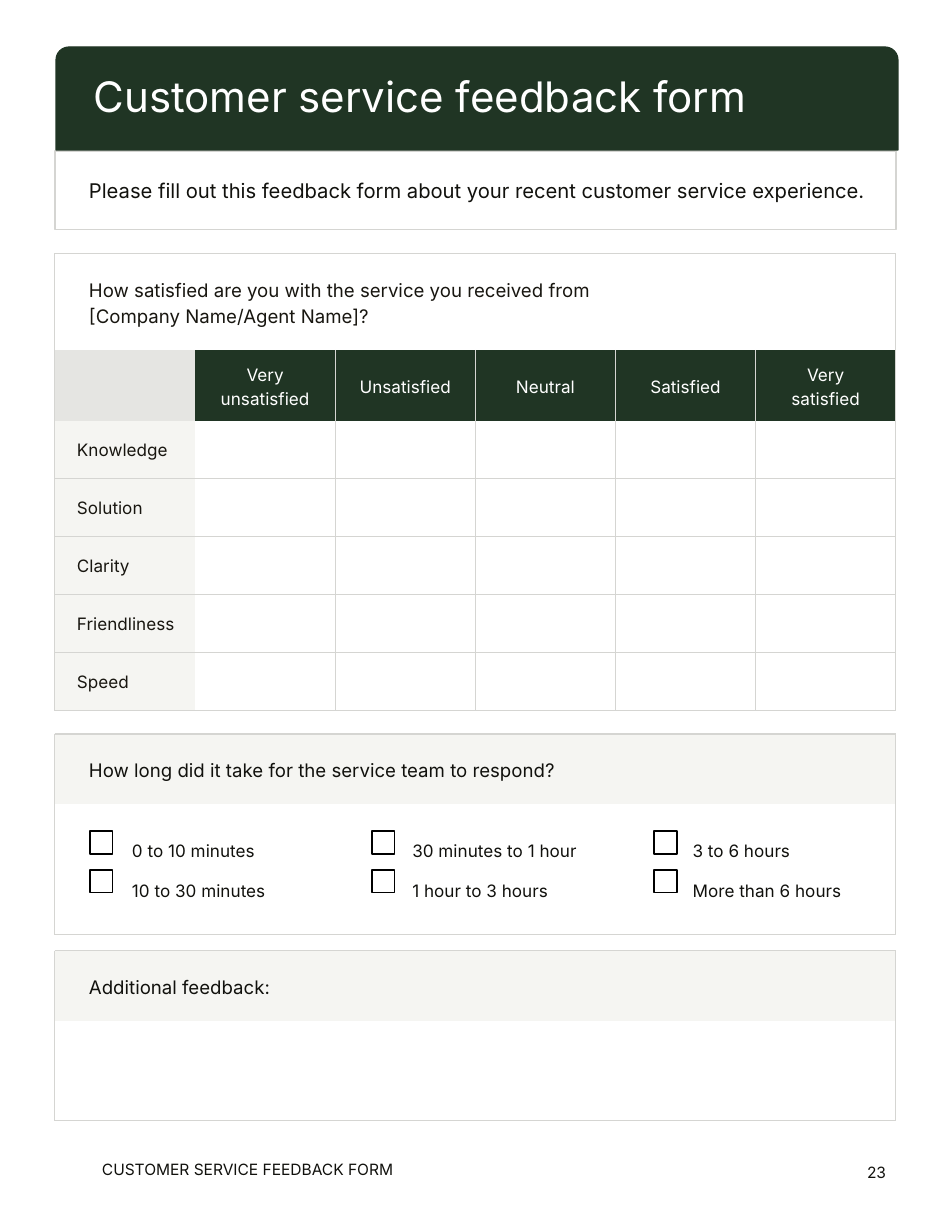
from lxml import etree
from pptx import Presentation
from pptx import util as u
from pptx.dml.color import RGBColor
from pptx.enum import shapes, text
from pptx.oxml.ns import qn

SCALE = 914400 / 112  # EMU in one px
LEFT, WIDTH = 55, 841
GREEN, INK, DARK, WHITE = "203524", "11110D", "181610", "FFFFFF"
PALE, GREY, RULE = "F5F5F2", "E5E5E2", "D5D5D2"
MIDDLE = text.MSO_ANCHOR.MIDDLE


def px(length):
    return u.Emu(round(length * SCALE))


def color(value):
    return RGBColor.from_string(value)


def write(frame, content, size=11, ink=INK, align=None, spacing=None, before=0, indent=0):
    """Write a list of paragraphs; a newline inside one is a line break."""
    for number, line in enumerate(content):
        para = frame.paragraphs[0] if number == 0 else frame.add_paragraph()
        if indent:
            para._p.get_or_add_pPr().set("marL", str(px(indent)))
            para._p.get_or_add_pPr().set("indent", "0")
        if align is not None:
            para.alignment = align
        if spacing:
            para.line_spacing = spacing
        if before and number:
            para.space_before = u.Pt(before)
        for part, words in enumerate(line.split("\n")):
            if part:
                para.add_line_break()
            span = para.add_run()
            span.text = words
            span.font.size = u.Pt(size)
            span.font.name = "Inter"
            span.font.color.rgb = color(ink)


def set_margins(target, insets):
    for side, inset in zip(("left", "top", "right", "bottom"), insets):
        setattr(target, f"margin_{side}", px(inset))


class Form:
    def __init__(self, page):
        self.page = page

    def label(self, left, top, width, height, content, anchor=None, **style):
        box = self.page.shapes.add_textbox(*map(px, (left, top, width, height)))
        frame = box.text_frame
        frame.word_wrap = True
        set_margins(frame, (11, 11, 11, 11))
        if anchor is not None:
            frame.vertical_anchor = anchor
        write(frame, [content], **style)

    def panel(self, left, top, width, height, kind=shapes.MSO_SHAPE.RECTANGLE,
              fill=None, line=RULE, content=None, insets=(34, 22, 0, 22), **style):
        box = self.page.shapes.add_shape(kind, *map(px, (left, top, width, height)))
        box.shadow.inherit = False
        if fill:
            box.fill.solid()
            box.fill.fore_color.rgb = color(fill)
        else:
            box.fill.background()
        box.line.color.rgb = color(line)
        box.line.width = u.Pt(0.75)
        if content:
            frame = box.text_frame
            frame.word_wrap = True
            frame.vertical_anchor = MIDDLE
            set_margins(frame, insets)
            write(frame, [content], align=text.PP_ALIGN.LEFT, **style)
        return box

    def table(self, top, heights, columns):
        frame = self.page.shapes.add_table(
            len(heights), columns, px(LEFT), px(top), px(WIDTH), px(sum(heights)))
        table = frame.table
        table.first_row = table.horz_banding = False
        for row, height in zip(table.rows, heights):
            row.height = px(height)
        for column in table.columns:
            column.width = px(WIDTH / columns)
        return table

    def cell(self, cell, sides="", fill=WHITE, content=None, insets=(34, 22, 22, 22),
             anchor=MIDDLE, **style):
        properties = cell._tc.get_or_add_tcPr()
        for side in "LRTB":
            line = etree.SubElement(properties, qn(f"a:ln{side}"), w=str(u.Pt(0.75)))
            if side in sides:
                solid = etree.SubElement(line, qn("a:solidFill"))
                etree.SubElement(solid, qn("a:srgbClr"), val=RULE)
            else:
                etree.SubElement(line, qn("a:noFill"))
        cell.fill.solid()
        cell.fill.fore_color.rgb = color(fill)
        if content:
            set_margins(cell, insets)
            cell.vertical_anchor = anchor
            write(cell.text_frame, content, **style)

    def heading(self, table, content, fill=PALE, **style):
        """Fill the top row as one merged question cell."""
        count = len(table.columns)
        first = table.cell(0, 0)
        if count > 1:
            first.merge(table.cell(0, count - 1))
        self.cell(first, "LTR", fill, [content], size=12, spacing=1.15, **style)
        for column in range(1, count):
            self.cell(table.cell(0, column), "LTR", fill)


def main():
    deck = Presentation()
    deck.slide_width, deck.slide_height = px(952), px(1232)
    page = deck.slides.add_slide(deck.slide_layouts[6])
    form = Form(page)

    # Footer and introduction
    form.label(91, 1151, 367, 41, "CUSTOMER SERVICE FEEDBACK FORM", size=10)
    form.panel(LEFT, 151, WIDTH, 79, size=13, content=(
        "Please fill out this feedback form about your recent customer service experience."))

    # Response time
    choices = [
        ["0 to 10 minutes", "10 to 30 minutes"],
        ["30 minutes to 1 hour", "1 hour to 3 hours"],
        ["3 to 6 hours", "More than 6 hours"],
    ]
    response = form.table(734, [70, 129], 3)
    form.heading(response, "How long did it take for the service team to respond?")
    for column, (options, sides) in enumerate(zip(choices, ("LB", "B", "RB"))):
        form.cell(response.cell(1, column), sides, content=options,
                  insets=(34, 34, 22, 34), anchor=text.MSO_ANCHOR.TOP,
                  spacing=1.15, before=10, indent=43)
        for row in range(len(options)):
            form.panel(90 + 282 * column, 831 + 39 * row, 23, 23, line="000000")

    # Additional feedback
    feedback = form.table(951, [70, 100], 1)
    form.heading(feedback, "Additional feedback:")
    form.cell(feedback.cell(1, 0), "LRB")

    # Satisfaction grid
    ratings = ["Very unsatisfied", "Unsatisfied", "Neutral", "Satisfied", "Very satisfied"]
    topics = ["Knowledge", "Solution", "Clarity", "Friendliness", "Speed"]
    grid = form.table(254, [96, 71] + [58] * len(topics), 1 + len(ratings))
    form.heading(grid, "How satisfied are you with the service you received from\n"
                 "[Company Name/Agent Name]?", fill=WHITE, ink=DARK)
    form.cell(grid.cell(1, 0), "L", GREY)
    for column, rating in enumerate(ratings, 1):
        across = "R" if column == 1 else "LR"
        form.cell(grid.cell(1, column), across, GREEN, [rating], insets=(22, 11, 22, 11),
                  ink=WHITE, align=text.PP_ALIGN.CENTER, spacing=1.15)
        for row in range(len(topics)):
            form.cell(grid.cell(row + 2, column), across + ("TB" if row else "B"))
    for row, topic in enumerate(topics):
        form.cell(grid.cell(row + 2, 0), "LTB" if row else "LB", PALE, [topic],
                  insets=(22, 11, 11, 11), ink=DARK)

    # Page number and title
    form.label(851, 1132, 46, 80, "23", anchor=MIDDLE, size=10, align=text.PP_ALIGN.RIGHT)
    title = form.panel(56, 47, 842, 103, shapes.MSO_SHAPE.ROUND_2_SAME_RECTANGLE,
                       fill=GREEN, line=GREEN, content="Customer service feedback form",
                       insets=(34, 11, 11, 11), size=27, ink=WHITE, spacing=0.8)
    title.adjustments[0] = 0.125

    deck.save("out.pptx")


if __name__ == "__main__":
    main()
